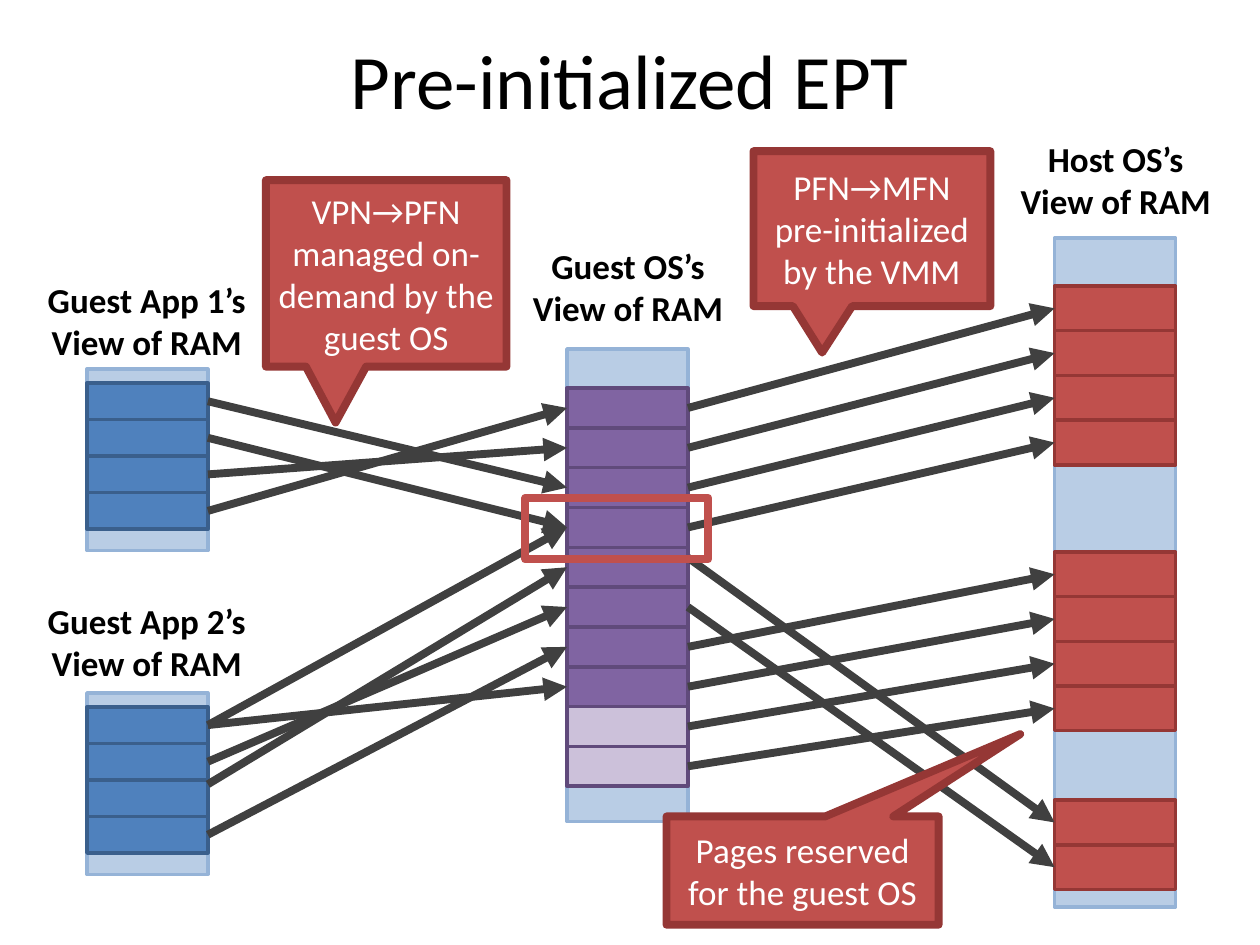
import lxml.etree
import pptx
import pptx.dml.color
import pptx.enum.shapes
import pptx.enum.text
import pptx.oxml.ns
import pptx.util

deck = pptx.Presentation()
deck.slide_width = pptx.util.Inches(10)
deck.slide_height = pptx.util.Inches(7.5)
column = deck.slide_width / 100
row = deck.slide_height / 75
slide = deck.slides.add_slide(deck.slide_layouts[5])
shapes = slide.shapes
kinds = pptx.enum.shapes.MSO_SHAPE
centre = pptx.enum.text.PP_ALIGN.CENTER
middle = pptx.enum.text.MSO_ANCHOR.MIDDLE


def color(value):
    return pptx.dml.color.RGBColor.from_string(value)


def block(kind, left, top, width, height, fill, edge, weight=2):
    shape = shapes.add_shape(kind, int(left * column), int(top * row),
                             int(width * column), int(height * row))
    shape.shadow.inherit = False
    if fill:
        shape.fill.solid()
        shape.fill.fore_color.rgb = color(fill)
    else:
        shape.fill.background()
    shape.line.color.rgb = color(edge)
    shape.line.width = pptx.util.Pt(weight)
    return shape


title = shapes.title
title.left, title.top = int(5 * column), 0
title.width, title.height = int(90 * column), int(12.5 * row)
title.text_frame.text = "Pre-initialized EPT"
title.text_frame.vertical_anchor = middle
heading = title.text_frame.paragraphs[0]
heading.alignment = centre
heading.font.name = "Calibri"
heading.font.size = pptx.util.Pt(44)
heading.font.color.rgb = color("000000")

ram_width = 9.6
app_left, guest_left, host_left = 6.9, 45, 83.7
app_pitch, guest_pitch, host_pitch = 2.9, 3.16, 3.55
app1_top, app2_top, guest_top = 30.4, 56.1, 30.8
host_low, host_mid, host_high = 22.7, 43.8, 63.5
blue, purple, red = ("4F81BD", "3A5F8C"), ("8064A2", "604A7B"), ("C0504D", "953735")
lilac = ("CCC1DA", "604A7B")

for owner, left, top, height, label_left, label_top, label_width in [
    ("Guest App 1’s", app_left, 29.3, 14.4, 2.7, 21.6, 17.9),
    ("Host OS’s", host_left, 18.9, 53.1, 79.9, 10.4, 17.3),
    ("Guest OS’s", guest_left, 27.7, 37.5, 41.2, 18.9, 17.3),
    ("Guest App 2’s", app_left, 55, 14.4, 2.7, 47.1, 17.9),
]:
    block(kinds.RECTANGLE, left, top, ram_width, height, "B9CDE5", "95B3D7")
    label = shapes.add_textbox(int(label_left * column), int(label_top * row),
                               int(label_width * column), int(7.7 * row)).text_frame
    label.word_wrap = False
    label.text = owner + "\nView of RAM"
    for line in label.paragraphs:
        line.alignment = centre
        line.font.name = "Calibri"
        line.font.size = pptx.util.Pt(20)
        line.font.bold = True
        line.font.color.rgb = color("000000")

for left, top, pitch, count, (fill, edge) in [
    (app_left, app1_top, app_pitch, 4, blue),
    (app_left, app2_top, app_pitch, 4, blue),
    (guest_left, guest_top, guest_pitch, 8, purple),
    (guest_left, guest_top + 8 * guest_pitch, guest_pitch, 2, lilac),
    (host_left, host_low, host_pitch, 4, red),
    (host_left, host_mid, host_pitch, 4, red),
    (host_left, host_high, host_pitch, 2, red),
]:
    for page in range(count):
        block(kinds.RECTANGLE, left, top + page * pitch, ram_width, pitch, fill, edge)

app1 = (app_left, app1_top, app_pitch)
app2 = (app_left, app2_top, app_pitch)
guest = (guest_left, guest_top, guest_pitch)
low, mid, high = [(host_left, top, host_pitch) for top in (host_low, host_mid, host_high)]

for source, target, mappings in [
    (app1, guest, [(0, 2), (1, 3), (2, 1), (3, 0)]),
    (app2, guest, [(0, 3), (0, 7), (1, 5), (1.62, 4), (3, 6)]),
    (guest, low, [(0, 0), (1, 1), (2, 2), (3, 3)]),
    (guest, high, [(3.76, 0), (5, 1)]),
    (guest, mid, [(6, 0), (7, 1), (8, 2), (9, 3)]),
]:
    for source_page, target_page in mappings:
        arrow = shapes.add_connector(
            pptx.enum.shapes.MSO_CONNECTOR.STRAIGHT,
            int((source[0] + ram_width) * column),
            int((source[1] + (source_page + 0.5) * source[2]) * row),
            int(target[0] * column),
            int((target[1] + (target_page + 0.5) * target[2]) * row))
        arrow.line.color.rgb = color("404040")
        arrow.line.width = pptx.util.Pt(4.5)
        stroke = arrow.line._get_or_add_ln()
        lxml.etree.SubElement(stroke, pptx.oxml.ns.qn("a:tailEnd"), type="triangle")
        lxml.etree.SubElement(arrow._element.spPr, pptx.oxml.ns.qn("a:effectLst"))

block(kinds.RECTANGLE, 41.7, 39.5, 14.5, 4.9, None, "C0504D", 4.5)

for remark, left, top, width, height, tip in [
    ("PFN→MFN pre-initialized by the VMM", 59.8, 12, 18.8, 12.3, (-0.21, 0.8)),
    ("VPN→PFN managed on-demand by the guest OS", 21.1, 14.3, 19.1, 14.8, (-0.21, 0.8)),
    ("Pages reserved for the guest OS", 52.9, 64.8, 21.6, 8.6, (0.8, -1.26)),
]:
    callout = block(kinds.RECTANGULAR_CALLOUT, left, top, width, height, *red, 4.5)
    callout.adjustments[0], callout.adjustments[1] = tip
    callout.text_frame.word_wrap = True
    callout.text_frame.vertical_anchor = middle
    callout.text_frame.text = remark
    wording = callout.text_frame.paragraphs[0]
    wording.alignment = centre
    wording.font.name = "Calibri"
    wording.font.size = pptx.util.Pt(20)
    wording.font.color.rgb = color("FFFFFF")

deck.save("out.pptx")
